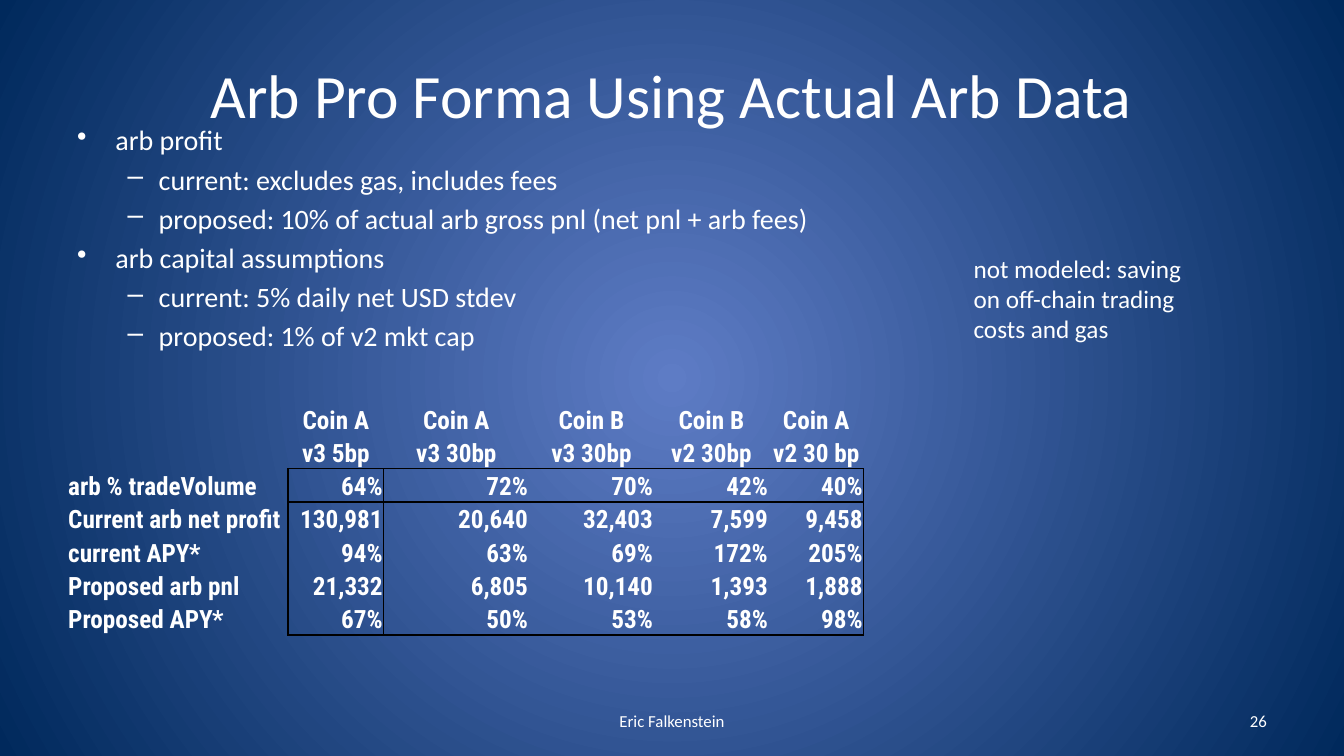
from dataclasses import dataclass
from pptx import Presentation
from pptx.dml.color import RGBColor
from pptx.enum.text import MSO_ANCHOR, PP_ALIGN
from pptx.oxml import parse_xml
from pptx.oxml.ns import nsdecls, qn
from pptx.util import Inches, Pt

WIDE, HIGH = Inches(13.33), Inches(7.5)
EDGE = 0.05
SPAN = 1 - 2 * EDGE


@dataclass(frozen=True)
class Theme:
    """Colours, fonts and type sizes of the slide."""
    ink: str = "FFFFFF"
    rule: str = "000000"
    glow: str = "5E7CC5"
    deep: str = "00295C"
    face: str = "Calibri"
    grid: str = "Roboto Condensed"
    title: int = 44
    body: int = 20
    note: int = 18
    foot: int = 12


THEME = Theme()

POINTS = [
    ("arb profit", ["current: excludes gas, includes fees",
                    "proposed: 10% of actual arb gross pnl (net pnl + arb fees)"]),
    ("arb capital assumptions", ["current: 5% daily net USD stdev",
                                 "proposed: 1% of v2 mkt cap"]),
]
ROWS = [
    ["", "Coin A", "Coin A", "Coin B", "Coin B", "Coin A"],
    ["", "v3 5bp", "v3 30bp", "v3 30bp", "v2 30bp", "v2 30 bp"],
    ["arb % tradeVolume", "64%", "72%", "70%", "42%", "40%"],
    ["Current arb net profit", "130,981", "20,640", "32,403", "7,599", "9,458"],
    ["current APY*", "94%", "63%", "69%", "172%", "205%"],
    ["Proposed arb pnl", "21,332", "6,805", "10,140", "1,393", "1,888"],
    ["Proposed APY*", "67%", "50%", "53%", "58%", "98%"],
]
COLS = [2.19, 0.95, 1.44, 1.24, 1.14, 0.94]
HEADS = 2
TALL, LOW = 0.57, 0.33
PLAIN = "{2D5ABB26-0587-4C30-8999-92F81FD0307C}"


def paint(slide):
    """Fill the background with a round glow."""
    fill = slide.background.fill
    fill.gradient()
    for stop, tone in zip(fill.gradient_stops, (THEME.glow, THEME.deep)):
        stop.color.rgb = RGBColor.from_string(tone)
    grad = next(slide.element.iter(qn("a:gradFill")))
    grad.replace(grad.find(qn("a:lin")), parse_xml(
        f'<a:path {nsdecls("a")} path="circle">'
        '<a:fillToRect l="50000" t="50000" r="50000" b="50000"/></a:path>'))


def style(para, size, face=THEME.face, bold=False, align=PP_ALIGN.LEFT):
    """Set the type of a paragraph."""
    para.font.size, para.font.name, para.font.bold = Pt(size), face, bold
    para.font.color.rgb = RGBColor.from_string(THEME.ink)
    para.alignment = align


def frame(slide, left, top, width, height, anchor=MSO_ANCHOR.TOP):
    """Add a wrapped text box placed by shares of the slide."""
    box = slide.shapes.add_textbox(
        int(WIDE * left), int(HIGH * top), int(WIDE * width), int(HIGH * height))
    text = box.text_frame
    text.word_wrap, text.vertical_anchor = True, anchor
    return text


def label(slide, words, area, size, align=PP_ALIGN.LEFT, anchor=MSO_ANCHOR.MIDDLE):
    """Add one paragraph of text."""
    para = frame(slide, *area, anchor).paragraphs[0]
    para.text = words
    style(para, size, align=align)


def bullet(para, words, level):
    """Write a list item with its mark and indent."""
    mark, left, hang = [("•", 0.38, 0.38), ("–", 0.81, 0.31)][level]
    para.text, para.level = words, level
    style(para, THEME.body)
    para.space_before = Pt(THEME.body * 0.2)
    props = para._p.get_or_add_pPr()
    props.set("marL", str(Inches(left)))
    props.set("indent", str(-Inches(hang)))
    props.insert_element_before(
        parse_xml(f'<a:buChar {nsdecls("a")} char="{mark}"/>'),
        "a:tabLst", "a:defRPr", "a:extLst")


def outline(points, text):
    """Write a list of two levels."""
    items = [item for head, subs in points
             for item in [(head, 0)] + [(sub, 1) for sub in subs]]
    for spot, (words, level) in enumerate(items):
        para = text.add_paragraph() if spot else text.paragraphs[0]
        bullet(para, words, level)


def sides(row, col):
    """Name the cell sides that lie on the frame of the figures."""
    last, end = len(ROWS) - 1, len(COLS) - 1
    inner, data = row >= HEADS, col > 0
    tests = {
        "L": inner and col == 1,
        "R": inner and col in (0, end),
        "T": data and row == HEADS,
        "B": data and row in (HEADS - 1, last),
    }
    return [side for side, drawn in tests.items() if drawn]


def border(cell, names):
    """Draw thin lines on the named sides of a cell."""
    props = cell._tc.get_or_add_tcPr()
    for spot, name in enumerate(names):
        props.insert(spot, parse_xml(
            f'<a:ln{name} {nsdecls("a")} w="{Pt(1)}"><a:solidFill>'
            f'<a:srgbClr val="{THEME.rule}"/></a:solidFill></a:ln{name}>'))


def entry(cell, words, row, col):
    """Write and style one table cell."""
    cell.margin_left = cell.margin_right = cell.margin_top = Inches(0.01)
    cell.margin_bottom = 0
    cell.vertical_anchor = MSO_ANCHOR.BOTTOM
    cell.fill.background()
    align = (PP_ALIGN.LEFT if col == 0 else
             PP_ALIGN.CENTER if row < HEADS else PP_ALIGN.RIGHT)
    para = cell.text_frame.paragraphs[0]
    para.text = words
    style(para, THEME.note, THEME.grid, True, align)
    border(cell, sides(row, col))


def figures(slide, left, top):
    """Add the table of figures."""
    highs = [TALL] + [LOW] * (len(ROWS) - 1)
    table = slide.shapes.add_table(
        len(ROWS), len(COLS), int(WIDE * left), int(HIGH * top),
        Inches(sum(COLS)), Inches(sum(highs))).table
    table.first_row = table.horz_banding = False
    table._tbl.tblPr.find(qn("a:tableStyleId")).text = PLAIN
    for col, width in zip(table.columns, COLS):
        col.width = Inches(width)
    for row, high in zip(table.rows, highs):
        row.height = Inches(high)
    for row, line in enumerate(ROWS):
        for col, words in enumerate(line):
            entry(table.cell(row, col), words, row, col)


def main():
    """Build and save the slide."""
    deck = Presentation()
    deck.slide_width, deck.slide_height = WIDE, HIGH
    slide = deck.slides.add_slide(deck.slide_layouts[6])
    paint(slide)
    label(slide, "Arb Pro Forma Using Actual Arb Data",
          (EDGE, 0.04, SPAN, 0.167), THEME.title, PP_ALIGN.CENTER)
    outline(POINTS, frame(slide, EDGE, 0.156, SPAN, 0.66))
    label(slide, "Eric Falkenstein", (0.342, 0.927, 0.316, 0.053),
          THEME.foot, PP_ALIGN.CENTER)
    label(slide, "26", (0.717, 0.927, 0.233, 0.053), THEME.foot, PP_ALIGN.RIGHT)
    label(slide, "not modeled: saving on off-chain trading costs and gas",
          (0.717, 0.328, 0.192, 0.135), THEME.note, anchor=MSO_ANCHOR.TOP)
    figures(slide, EDGE, 0.5)
    deck.save("out.pptx")


if __name__ == "__main__":
    main()
